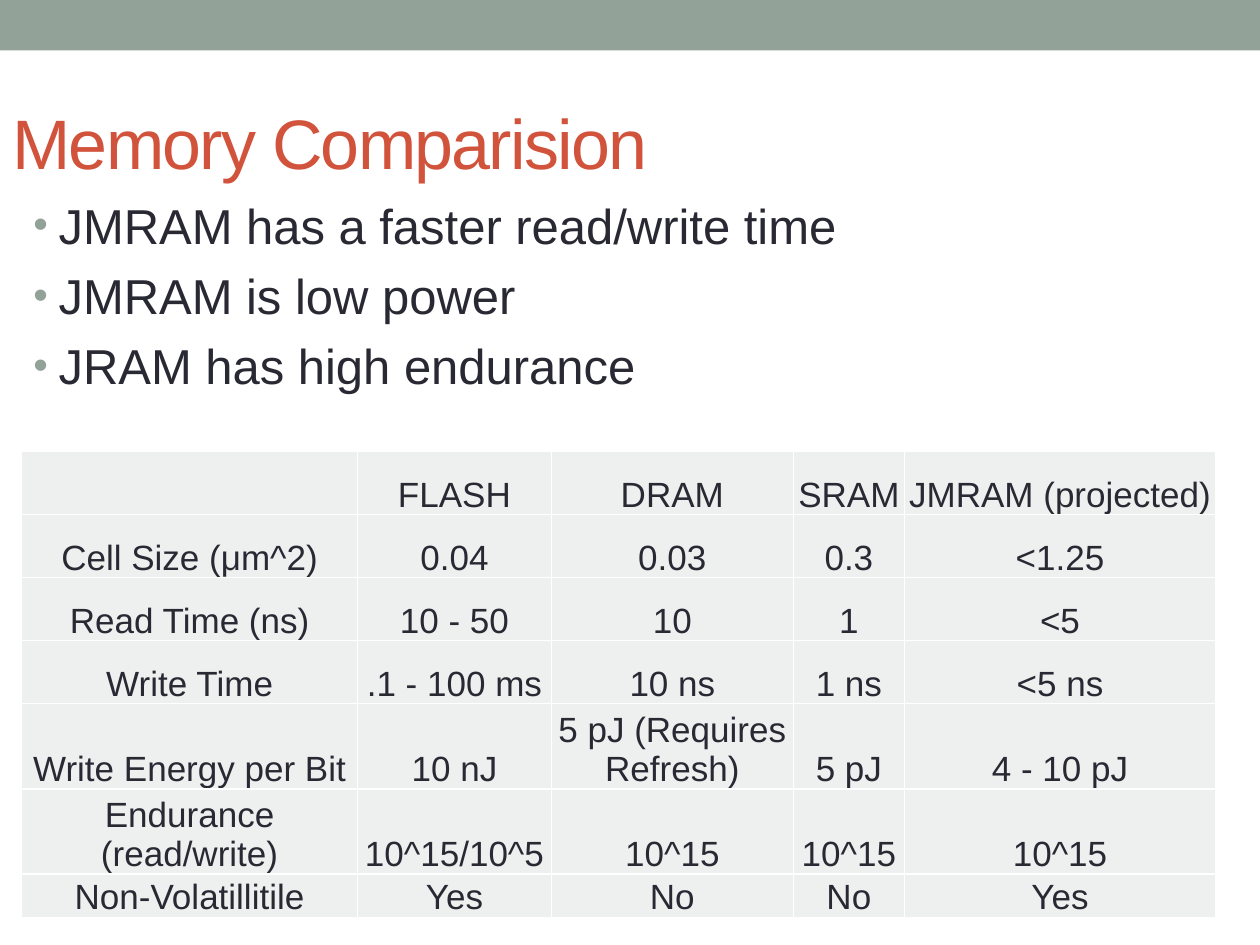
from pptx import Presentation
from pptx.util import Pt
from pptx.dml.color import RGBColor as RGB
from pptx.enum.shapes import MSO_SHAPE as SHAPE
from pptx.enum.text import MSO_ANCHOR as ANCHOR, PP_ALIGN as ALIGN
from pptx.oxml import parse_xml
from pptx.oxml.ns import nsdecls

COLORS = {"sage": "93A299", "red": "D2533C", "ink": "292934",
          "cell": "EEF0EF", "white": "FFFFFF"}
NS = nsdecls("a")


def add_run(para, text, size, color):
    run = para.add_run()
    run.text = text
    run.font.name = "Arial"
    run.font.size = Pt(size)
    run.font.color.rgb = RGB.from_string(COLORS[color])
    return run


deck = Presentation()
deck.slide_width, deck.slide_height = Pt(720), Pt(540)
slide = deck.slides.add_slide(deck.slide_layouts[6])
shapes = slide.shapes

# Top band
band = shapes.add_shape(SHAPE.RECTANGLE, 0, 0, Pt(720), Pt(28.8))
band.shadow.inherit = False
band.fill.solid()
band.fill.fore_color.rgb = RGB.from_string(COLORS["sage"])
band.line.fill.background()

# Title
title = shapes.add_textbox(0, Pt(42), Pt(684), Pt(78)).text_frame
title.word_wrap = True
title.vertical_anchor = ANCHOR.MIDDLE
run = add_run(title.paragraphs[0], "Memory Comparision", 40, "red")
run.font._element.set("spc", "-100")

# Table
rows = [
    ["", "FLASH", "DRAM", "SRAM", "JMRAM (projected)"],
    ["Cell Size (μm^2)", "0.04", "0.03", "0.3", "<1.25"],
    ["Read Time (ns)", "10 - 50", "10", "1", "<5"],
    ["Write Time", ".1 - 100 ms", "10 ns", "1 ns", "<5 ns"],
    ["Write Energy per Bit", "10 nJ", "5 pJ (Requires Refresh)", "5 pJ",
     "4 - 10 pJ"],
    ["Endurance (read/write)", "10^15/10^5", "10^15", "10^15", "10^15"],
    ["Non-Volatillitile", "Yes", "No", "No", "Yes"],
]
widths = [192, 110.7, 138.3, 63.5, 177.8]
heights = [36, 36, 36, 36, 45.2, 45.2, 22.4]
table = shapes.add_table(len(rows), len(widths), Pt(12.4), Pt(258),
                         Pt(sum(widths)), Pt(sum(heights))).table
table.first_row = table.horz_banding = False
for col, width in zip(table.columns, widths):
    col.width = Pt(width)
for row, height, texts in zip(table.rows, heights, rows):
    row.height = Pt(height)
    for cell, text in zip(row.cells, texts):
        cell.margin_left = cell.margin_right = cell.margin_top = Pt(0.7)
        cell.margin_bottom = 0
        cell.vertical_anchor = ANCHOR.BOTTOM
        para = cell.text_frame.paragraphs[0]
        para.alignment = ALIGN.CENTER
        if text:
            add_run(para, text, 20, "ink")
        props = cell._tc.get_or_add_tcPr()
        for side in ("lnL", "lnR", "lnT", "lnB"):
            props.append(parse_xml(
                f'<a:{side} {NS} w="12700"><a:solidFill><a:srgbClr '
                f'val="{COLORS["white"]}"/></a:solidFill></a:{side}>'))
        cell.fill.solid()
        cell.fill.fore_color.rgb = RGB.from_string(COLORS["cell"])

# Bullets
body = shapes.add_textbox(Pt(12), Pt(108), Pt(672), Pt(150)).text_frame
body.word_wrap = True
points = ["JMRAM has a faster read/write time", "JMRAM is low power",
          "JRAM has high endurance"]
for i, text in enumerate(points):
    para = body.add_paragraph() if i else body.paragraphs[0]
    para.space_before = Pt(6.5)
    add_run(para, text, 28, "ink")
    props = para._p.get_or_add_pPr()
    props.set("marL", str(Pt(14.4)))
    props.set("indent", str(-Pt(14.4)))
    for xml in (f'<a:buClr {NS}><a:srgbClr val="{COLORS["sage"]}"/></a:buClr>',
                f'<a:buSzPct {NS} val="85000"/>',
                f'<a:buFont {NS} typeface="Arial"/>',
                f'<a:buChar {NS} char="•"/>'):
        props.append(parse_xml(xml))

deck.save("out.pptx")
